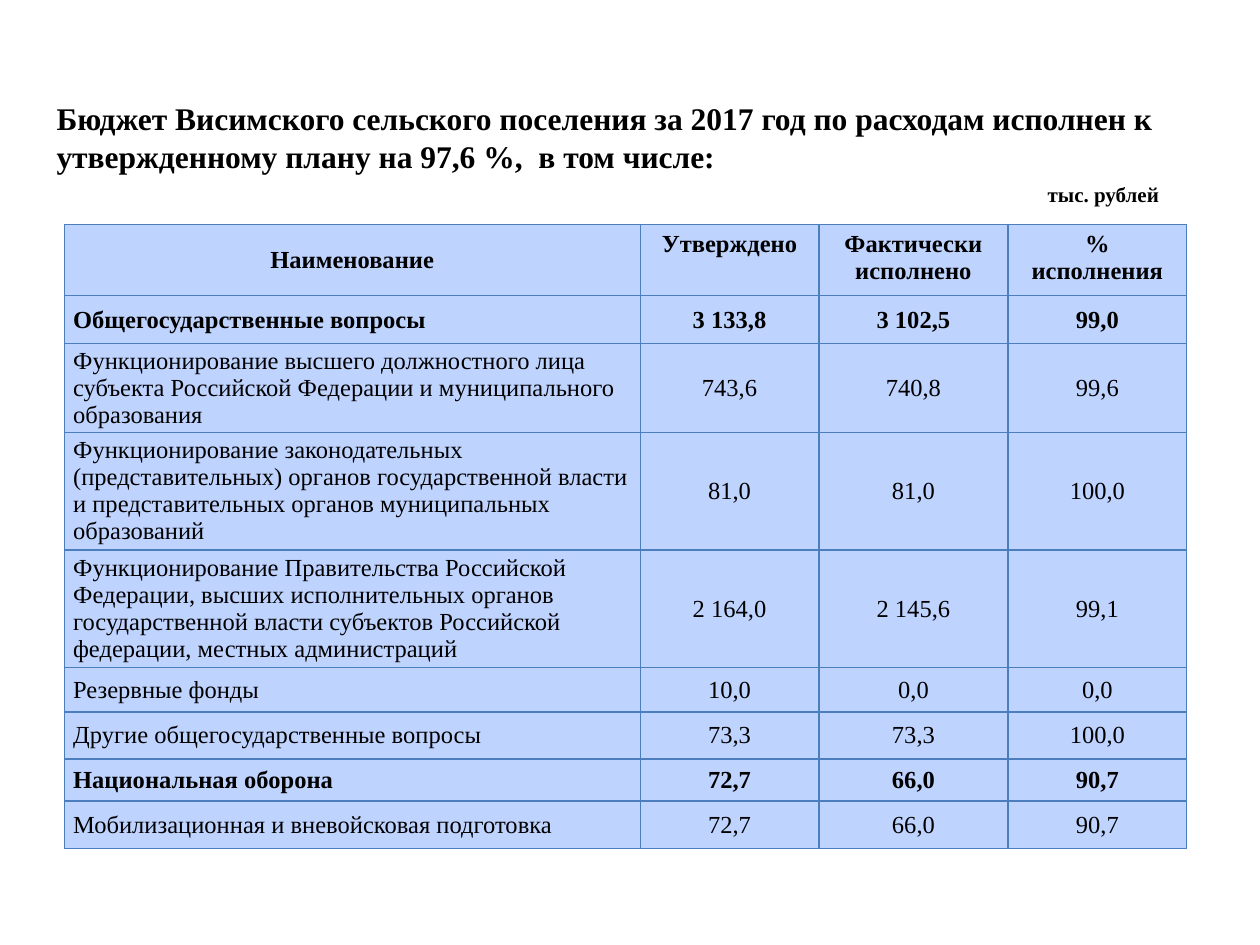
import pptx
import pptx.util
import pptx.dml.color
import pptx.enum.text
from dataclasses import dataclass
from lxml import etree
from pptx.oxml.ns import qn

Pt = pptx.util.Pt
RGB = pptx.dml.color.RGBColor
ALIGN = pptx.enum.text.PP_ALIGN
ANCHOR = pptx.enum.text.MSO_ANCHOR
AUTO = pptx.enum.text.MSO_AUTO_SIZE


@dataclass(frozen=True)
class Theme:
    font: str = "Times New Roman"
    ink: str = "000000"
    fill: str = "BFD3FF"
    border: str = "4B7EBC"
    border_width: float = 0.75
    title: int = 18
    unit: int = 12
    body: int = 14


THEME = Theme()

TITLE = ("Бюджет Висимского сельского поселения за 2017 год по расходам исполнен к "
         "утвержденному плану на 97,6 %,  в том числе:")
HEADER = ("Наименование", "Утверждено", "Фактически исполнено", "% исполнения")
COL_WIDTHS = (329, 102.2, 108, 102.2)
HEADER_HEIGHT = 40.3
ROWS = (
    (27.4, True, "Общегосударственные вопросы", "3 133,8", "3 102,5", "99,0"),
    (50.3, False, "Функционирование высшего должностного лица субъекта Российской "
     "Федерации и муниципального образования", "743,6", "740,8", "99,6"),
    (67.4, False, "Функционирование законодательных (представительных) органов "
     "государственной власти и представительных органов муниципальных образований",
     "81,0", "81,0", "100,0"),
    (67.4, False, "Функционирование Правительства Российской Федерации, высших "
     "исполнительных органов государственной власти субъектов Российской федерации, "
     "местных администраций", "2 164,0", "2 145,6", "99,1"),
    (25.2, False, "Резервные фонды", "10,0", "0,0", "0,0"),
    (26.9, False, "Другие общегосударственные вопросы", "73,3", "73,3", "100,0"),
    (24, True, "Национальная оборона", "72,7", "66,0", "90,7"),
    (27.4, False, "Мобилизационная и вневойсковая подготовка", "72,7", "66,0", "90,7"),
)


def write(tf, text, size, bold, align=None):
    p = tf.paragraphs[0]
    p.text = text
    p.alignment = align
    p.font.name = THEME.font
    p.font.size = Pt(size)
    p.font.bold = bold
    p.font.color.rgb = RGB.from_string(THEME.ink)


def add_text(s, box, text, size, wrap):
    tf = s.shapes.add_textbox(*map(Pt, box)).text_frame
    tf.word_wrap = wrap
    tf.auto_size = AUTO.SHAPE_TO_FIT_TEXT
    write(tf, text, size, True)


def set_borders(cell):
    tc_pr = cell._tc.get_or_add_tcPr()
    for i, side in enumerate(("lnL", "lnR", "lnT", "lnB")):
        ln = etree.Element(qn(f"a:{side}"), w=str(Pt(THEME.border_width)))
        solid = etree.SubElement(ln, qn("a:solidFill"))
        etree.SubElement(solid, qn("a:srgbClr"), val=THEME.border)
        tc_pr.insert(i, ln)


def fill_cell(cell, text, bold, align, centred=True):
    write(cell.text_frame, text, THEME.body, bold, align)
    if centred:
        cell.vertical_anchor = ANCHOR.MIDDLE
        cell.margin_left = cell.margin_right = Pt(5)
        cell.margin_top = cell.margin_bottom = 0
    cell.fill.solid()
    cell.fill.fore_color.rgb = RGB.from_string(THEME.fill)
    set_borders(cell)


def add_budget_table(s, left, top):
    heights = (HEADER_HEIGHT, *(row[0] for row in ROWS))
    size = sum(COL_WIDTHS), sum(heights)
    table = s.shapes.add_table(len(heights), len(COL_WIDTHS),
                               *map(Pt, (left, top, *size))).table
    table.horz_banding = False
    for column, width in zip(table.columns, COL_WIDTHS):
        column.width = Pt(width)
    for row, height in zip(table.rows, heights):
        row.height = Pt(height)
    for c, text in enumerate(HEADER):
        fill_cell(table.cell(0, c), text, True, ALIGN.CENTER, centred=c == 0)
    for r, (_, bold, name, *values) in enumerate(ROWS, 1):
        fill_cell(table.cell(r, 0), name, bold, ALIGN.LEFT)
        for c, value in enumerate(values, 1):
            fill_cell(table.cell(r, c), value, bold, ALIGN.CENTER)


def main():
    prs = pptx.Presentation()
    prs.slide_width, prs.slide_height = Pt(720), Pt(540)
    s = prs.slides.add_slide(prs.slide_layouts[6])
    add_text(s, (25.2, 53.3, 680.4, 51), TITLE, THEME.title, True)
    add_budget_table(s, 36.8, 128.2)
    add_text(s, (591.6, 100.1, 78.5, 21.8), "тыс. рублей", THEME.unit, False)
    prs.save("out.pptx")


if __name__ == "__main__":
    main()
